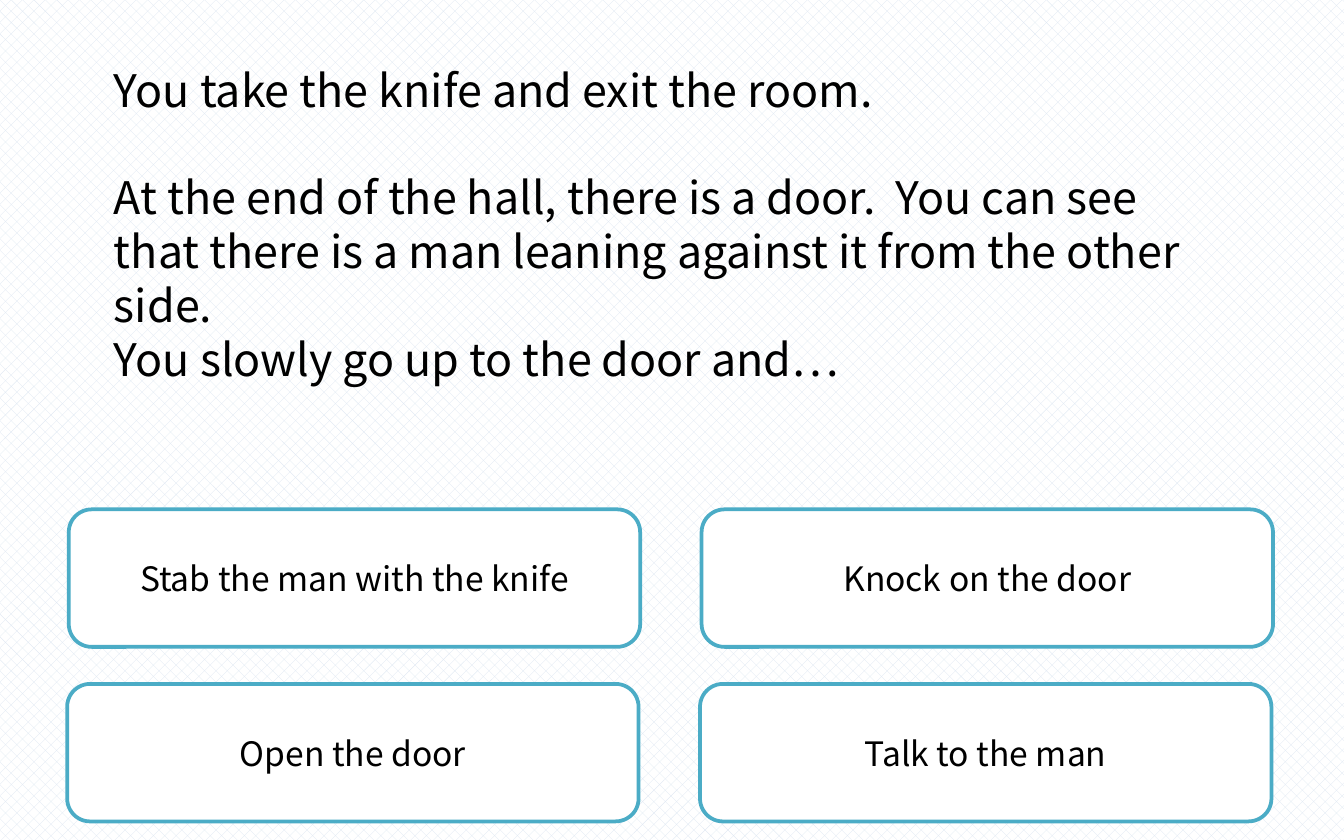
from pptx import Presentation
from pptx.dml.color import RGBColor
from pptx.enum.dml import MSO_PATTERN
from pptx.enum.shapes import MSO_SHAPE
from pptx.enum.text import MSO_ANCHOR, MSO_AUTO_SIZE, PP_ALIGN
from pptx.util import Cm, Pt

FONT = "Noto Sans CJK KR"


def rgb(value):
    return RGBColor.from_string(value)


def add_text(p, text, size, align):
    p.alignment = align
    r = p.add_run()
    r.text = text
    r.font.name = FONT
    r.font.size = Pt(size)
    r.font.color.rgb = rgb("000000")


prs = Presentation()
prs.slide_width, prs.slide_height = Cm(25.4), Cm(15.88)
s = prs.slides.add_slide(prs.slide_layouts[5])

# Patterned background
fill = s.background.fill
fill.patterned()
fill.pattern = MSO_PATTERN.from_xml("pct40")
fill.fore_color.rgb = rgb("DCE6F2")
fill.back_color.rgb = rgb("FFFFFF")

# Story text, with a one-line gap after the first paragraph
story = [
    ("You take the knife and exit the room.", 29),
    ("At the end of the hall, there is a door.  You can see that there is "
     "a man leaning against it from the other side.", 0),
    ("You slowly go up to the door and…", 0),
]
sp = s.shapes.title
sp.left, sp.top, sp.width, sp.height = Cm(1.9), Cm(0.33), Cm(21.6), Cm(7.8)
tf = sp.text_frame
tf.word_wrap = True
tf.auto_size = MSO_AUTO_SIZE.NONE
tf.vertical_anchor = MSO_ANCHOR.MIDDLE
for i, (text, gap) in enumerate(story):
    p = tf.add_paragraph() if i else tf.paragraphs[0]
    p.space_before, p.space_after = Pt(0), Pt(gap)
    add_text(p, text, 24, PP_ALIGN.LEFT)

# Choice buttons in a 2 x 2 grid, lower row slightly to the left
choices = [
    ["Stab the man with the knife", "Knock on the door"],
    ["Open the door", "Talk to the man"],
]
for row, labels in enumerate(choices):
    for col, label in enumerate(labels):
        sp = s.shapes.add_shape(
            MSO_SHAPE.ROUNDED_RECTANGLE,
            Cm(1.3 - 0.03 * row + 11.96 * col), Cm(9.63 + 3.3 * row),
            Cm(10.8), Cm(2.6))
        sp.shadow.inherit = False
        sp.fill.solid()
        sp.fill.fore_color.rgb = rgb("FFFFFF")
        sp.line.color.rgb = rgb("4BACC6")
        sp.line.width = Pt(2)
        tf = sp.text_frame
        tf.word_wrap = True
        tf.vertical_anchor = MSO_ANCHOR.MIDDLE
        add_text(tf.paragraphs[0], label, 18, PP_ALIGN.CENTER)

prs.save("out.pptx")
